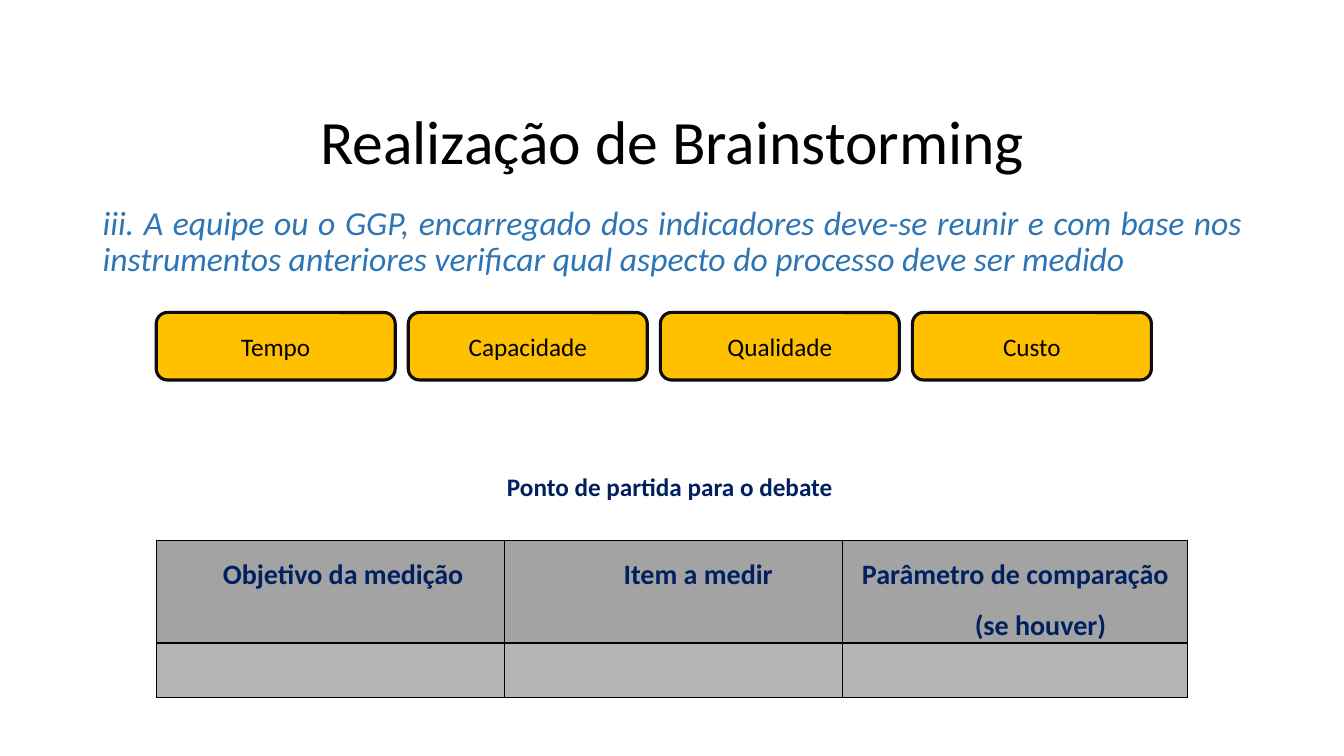
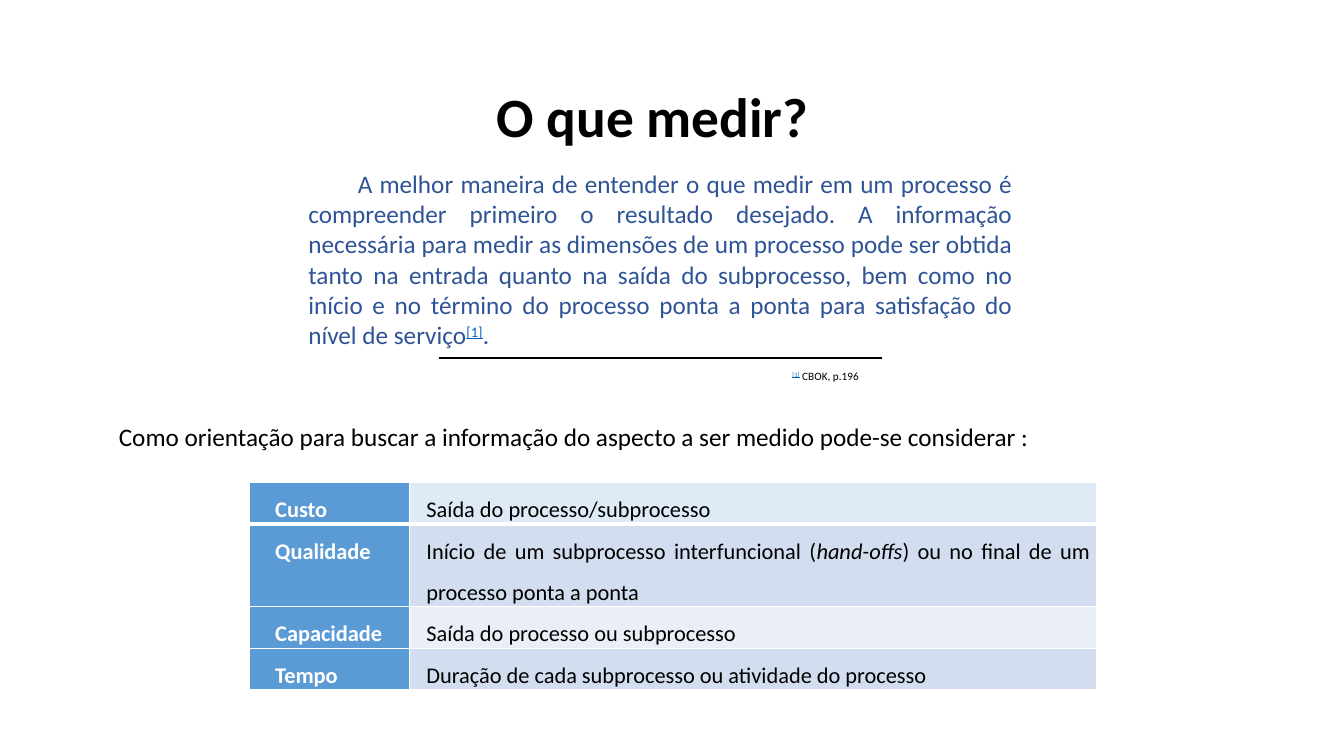
"""Builds two slides on choosing what to measure in a process."""
from dataclasses import dataclass

from lxml import etree
from pptx import Presentation
from pptx.dml.color import RGBColor
from pptx.enum.shapes import MSO_CONNECTOR, MSO_SHAPE
from pptx.enum.text import MSO_ANCHOR, PP_ALIGN
from pptx.oxml.ns import qn
from pptx.util import Inches, Pt


@dataclass(frozen=True)
class Theme:
    font: str = "Calibri"
    black: str = "000000"
    white: str = "FFFFFF"
    navy: str = "002060"
    intro: str = "2E75B6"
    quote: str = "2F5496"
    link: str = "0563C1"
    button: str = "FFC000"
    button_line: str = "0D0D0D"
    head_fill: str = "A3A3A3"
    empty_fill: str = "B5B5B5"
    label_fill: str = "5B9BD5"
    title_pt: float = 44
    subtitle_pt: float = 39.6
    intro_pt: float = 24
    head_pt: float = 20
    body_pt: float = 18
    cell_pt: float = 16
    note_pt: float = 8


T = Theme()
LEFT, CENTER, JUSTIFY = PP_ALIGN.LEFT, PP_ALIGN.CENTER, PP_ALIGN.JUSTIFY

INTRO = ("iii. A equipe ou o GGP, encarregado dos indicadores deve-se reunir e com base nos "
         "instrumentos anteriores verificar qual aspecto do processo deve ser medido")
ASPECTS = ["Tempo", "Capacidade", "Qualidade", "Custo"]
DEBATE_HEADS = [
    ("Objetivo da medição", LEFT, 0.5, 0.09),
    ("Item a medir", CENTER, 0.5, -0.01),
    ("Parâmetro de comparação (se houver)", CENTER, 0.5, -0.5),
]
DEBATE_WIDTHS = [3.45, 3.36, 3.42]
DEBATE_HEIGHTS = [1.02, 0.54]

NOTE_MARK = ("[1]", {"color": T.link, "underline": True, "raised": True})
QUOTE = [
    "A melhor maneira de entender o que medir em um processo é compreender primeiro o resultado "
    "desejado. A informação necessária para medir as dimensões de um processo pode ser obtida "
    "tanto na entrada quanto na saída do subprocesso, bem como no início e no término do processo "
    "ponta a ponta para satisfação do nível de serviço",
    NOTE_MARK,
    ".",
]
GUIDE = "Como orientação para buscar a informação do aspecto a ser medido pode-se considerar :"
SOURCES = [
    ("Custo", ["Saída do processo/subprocesso"], "DEEBF7", 0.41),
    ("Qualidade", ["Início de um subprocesso interfuncional (", ("hand-offs", {"italic": True}),
                   ") ou no final de um processo ponta a ponta"], "D2DEEF", 0.82),
    ("Capacidade", ["Saída do processo ou subprocesso"], "EAEFF7", 0.41),
    ("Tempo", ["Duração de cada subprocesso ou atividade do processo"], "D2DEEF", 0.41),
]
SOURCE_WIDTHS = [1.59, 6.82]


def rgb(color):
    return RGBColor.from_string(color)


def write(tf, runs, size, color=T.black, align=LEFT, margin=0, indent=0, spacing=1, **base):
    """Fill the first paragraph of a text frame, run by run."""
    p = tf.paragraphs[0]
    p.alignment, p.line_spacing = align, spacing
    pPr = p._p.get_or_add_pPr()
    pPr.set("marL", str(Inches(margin)))
    pPr.set("indent", str(Inches(indent)))
    for item in runs:
        text, extra = (item, {}) if isinstance(item, str) else item
        style = {"color": color, **base, **extra}
        r = p.add_run()
        r.text = text
        r.font.name, r.font.size = T.font, Pt(size)
        r.font.color.rgb = rgb(style["color"])
        r.font.bold = style.get("bold", False)
        r.font.italic = style.get("italic", False)
        r.font.underline = style.get("underline", False)
        if style.get("raised"):
            r._r.get_or_add_rPr().set("baseline", "30000")


def add_text(s, box, runs, size, anchor=MSO_ANCHOR.TOP, **style):
    tf = s.shapes.add_textbox(*map(Inches, box)).text_frame
    tf.word_wrap, tf.vertical_anchor = True, anchor
    write(tf, runs, size, **style)


def add_title(s, box, text, size, **style):
    add_text(s, box, [text], size, anchor=MSO_ANCHOR.MIDDLE, spacing=0.9, **style)


def add_grid(s, left, top, widths, heights):
    shape = s.shapes.add_table(len(heights), len(widths), Inches(left), Inches(top),
                               Inches(sum(widths)), Inches(sum(heights)))
    table = shape.table
    table.first_row = table.horz_banding = False
    for column, width in zip(table.columns, widths):
        column.width = Inches(width)
    for row, height in zip(table.rows, heights):
        row.height = Inches(height)
    return table


def style_cell(cell, fill, border, bottom=1, top=1):
    cell.margin_left = cell.margin_right = Inches(0.07)
    cell.margin_top = cell.margin_bottom = 0
    tcPr = cell._tc.get_or_add_tcPr()
    for side, width in (("lnL", 1), ("lnR", 1), ("lnT", top), ("lnB", bottom)):
        ln = etree.SubElement(tcPr, qn(f"a:{side}"), w=str(Pt(width)))
        solid = etree.SubElement(ln, qn("a:solidFill"))
        etree.SubElement(solid, qn("a:srgbClr"), val=border)
    cell.fill.solid()
    cell.fill.fore_color.rgb = rgb(fill)


def add_button(s, box, text):
    sp = s.shapes.add_shape(MSO_SHAPE.ROUNDED_RECTANGLE, *map(Inches, box))
    sp.shadow.inherit = False
    sp.fill.solid()
    sp.fill.fore_color.rgb = rgb(T.button)
    sp.line.color.rgb = rgb(T.button_line)
    sp.line.width = Pt(2.25)
    sp.text_frame.vertical_anchor = MSO_ANCHOR.MIDDLE
    write(sp.text_frame, [text], T.body_pt, align=CENTER)


def add_rule(s, left, top, width):
    line = s.shapes.add_connector(MSO_CONNECTOR.STRAIGHT, Inches(left), Inches(top),
                                  Inches(left + width), Inches(top))
    line.line.color.rgb = rgb(T.black)
    line.line.width = Pt(1.5)
    etree.SubElement(line._element.spPr, qn("a:effectLst"))


def build_brainstorming(s):
    add_title(s, (0.92, 1.02, 11.5, 0.82), "Realização de Brainstorming", T.title_pt, align=CENTER)
    add_text(s, (0.92, 2, 11.5, 0.9), [INTRO], T.intro_pt, color=T.intro,
             align=JUSTIFY, spacing=0.9, italic=True)
    left, width, step = 1.55, 2.37, 2.5
    for i, aspect in enumerate(ASPECTS):
        add_button(s, (left + i * step, 3.1, width, 0.67), aspect)
    add_text(s, (4.93, 4.63, 3.48, 0.4), ["Ponto de partida para o debate"], T.body_pt,
             color=T.navy, bold=True)
    table = add_grid(s, left, 5.36, DEBATE_WIDTHS, DEBATE_HEIGHTS)
    for c, (text, align, margin, indent) in enumerate(DEBATE_HEADS):
        style_cell(table.cell(0, c), T.head_fill, T.black)
        style_cell(table.cell(1, c), T.empty_fill, T.black)
        write(table.cell(0, c).text_frame, [text], T.head_pt, color=T.navy, align=align,
              margin=margin, indent=indent, spacing=1.5, bold=True)


def build_measures(s):
    add_title(s, (4.83, 0.83, 3.43, 0.72), "O que medir?", T.subtitle_pt, bold=True)
    add_text(s, (2.96, 1.62, 7.18, 1.93), QUOTE, T.body_pt, color=T.quote,
             align=JUSTIFY, indent=0.49)
    add_rule(s, 4.35, 3.55, 4.4)
    add_text(s, (7.27, 3.61, 1.68, 0.24), [NOTE_MARK, " CBOK, p.196"], T.note_pt,
             anchor=MSO_ANCHOR.MIDDLE, align=JUSTIFY, indent=0.49)
    add_text(s, (1.08, 4.13, 10.41, 0.4), [GUIDE], T.body_pt)
    table = add_grid(s, 2.47, 4.79, SOURCE_WIDTHS, [row[-1] for row in SOURCES])
    for i, (label, runs, fill, _) in enumerate(SOURCES):
        edges = {"bottom": 3 if i == 0 else 1, "top": 3 if i == 1 else 1}
        name, detail = table.cell(i, 0), table.cell(i, 1)
        style_cell(name, T.label_fill, T.white, **edges)
        style_cell(detail, fill, T.white, **edges)
        write(name.text_frame, [label], T.cell_pt, color=T.white, align=JUSTIFY,
              margin=0.19, spacing=1.5, bold=True)
        write(detail.text_frame, runs, T.cell_pt, align=JUSTIFY, margin=0.1, spacing=1.5)


def main():
    prs = Presentation()
    prs.slide_width, prs.slide_height = Inches(13.33), Inches(7.5)
    for build in (build_brainstorming, build_measures):
        build(prs.slides.add_slide(prs.slide_layouts[6]))
    prs.save("out.pptx")


if __name__ == "__main__":
    main()
